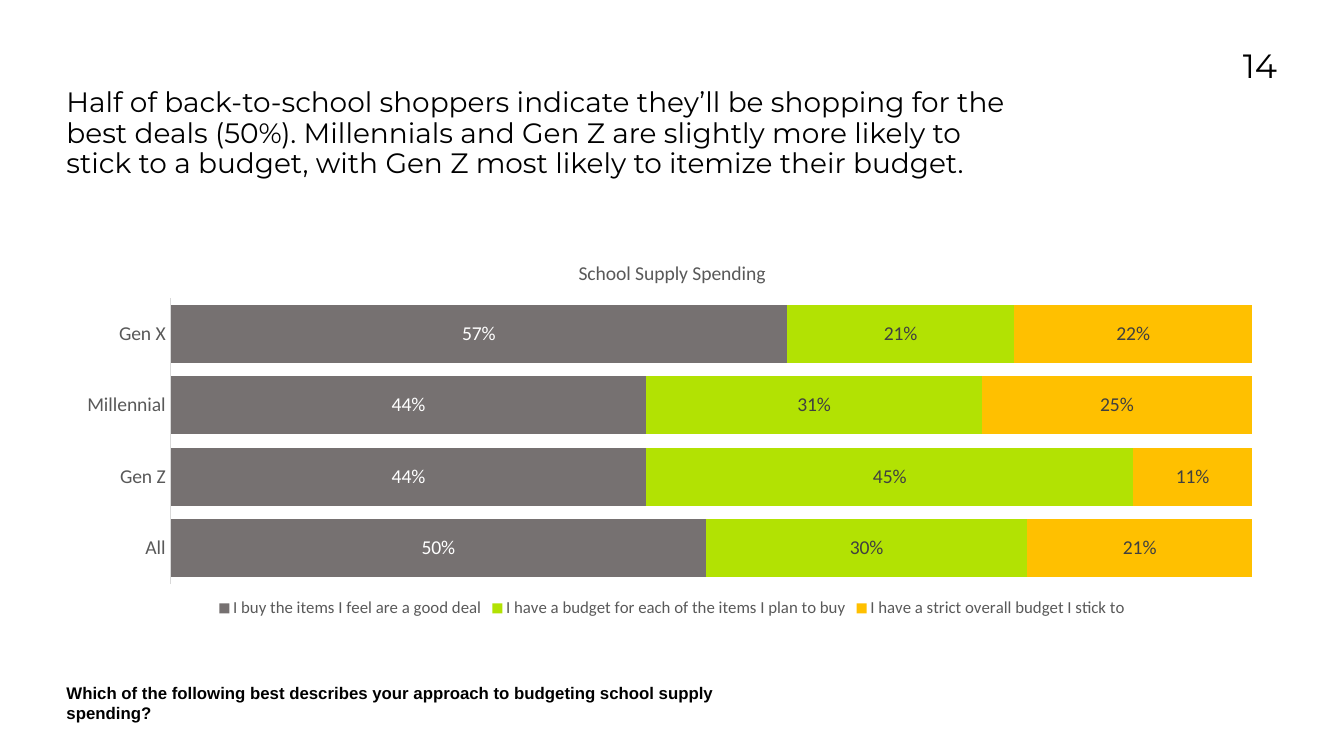
from pptx import Presentation
from pptx.chart.data import CategoryChartData
from pptx.dml.color import RGBColor as RGB
from pptx.enum.chart import XL_CHART_TYPE as CT, XL_LABEL_POSITION as LP
from pptx.enum.chart import XL_LEGEND_POSITION as LG, XL_TICK_LABEL_POSITION as TL, XL_TICK_MARK as TM
from pptx.enum.text import PP_ALIGN as AL
from pptx.oxml import parse_xml
from pptx.oxml.ns import nsdecls
from pptx.util import Cm, Pt

HEADLINE = ("Half of back-to-school shoppers indicate they’ll be shopping for the best deals (50%). "
            "Millennials and Gen Z are slightly more likely to stick to a budget, "
            "with Gen Z most likely to itemize their budget.")
QUESTION = "Which of the following best describes your approach to budgeting school supply spending?"
PAGE = "14"
CHART_TITLE = "School Supply Spending"
GROUPS = ["All", "Gen Z", "Millennial", "Gen X"]
ANSWERS = [
    ("I buy the items I feel are a good deal", (0.5, 0.44, 0.44, 0.57), "deal", "on_dark"),
    ("I have a budget for each of the items I plan to buy", (0.3, 0.45, 0.31, 0.21), "itemized", "on_light"),
    ("I have a strict overall budget I stick to", (0.21, 0.11, 0.25, 0.22), "strict", "on_light"),
]
PLOT = {"x": 0.086, "y": 0.138, "w": 0.893, "h": 0.761}


class Theme:
    """Colours, fonts and type sizes of the slide."""
    colors = {"text": "000000", "muted": "595959", "axis": "D9D9D9", "deal": "767171",
              "itemized": "B2E203", "strict": "FFC000", "on_dark": "FFFFFF", "on_light": "404040"}
    head, body, chart = "Montserrat", "Arial", "Calibri"
    page, title, label, note = 48, 40, 28, 24


def color(name):
    """Return a theme colour."""
    return RGB.from_string(Theme.colors[name])


def style(font, name, size, tint="text", bold=False):
    """Set face, size, colour and weight of a font."""
    font.name, font.size, font.bold = name, Pt(size), bold
    font.color.rgb = color(tint)


def add_text(s, text, box, name, size, bold=False, align=AL.LEFT, spacing=None):
    """Add a wrapped text box without insets."""
    tf = s.shapes.add_textbox(*map(Cm, box)).text_frame
    tf.word_wrap = True
    tf.margin_left = tf.margin_right = tf.margin_top = tf.margin_bottom = 0
    p = tf.paragraphs[0]
    p.alignment, p.line_spacing = align, spacing
    r = p.add_run()
    r.text = text
    style(r.font, name, size, bold=bold)


def place_plot(chart):
    """Fix the inner plot area inside the chart frame."""
    area = chart._chartSpace.chart.plotArea
    for old in area.findall("{*}layout"):
        area.remove(old)
    parts = '<c:layoutTarget val="inner"/><c:xMode val="edge"/><c:yMode val="edge"/>'
    parts += "".join(f'<c:{k} val="{v}"/>' for k, v in PLOT.items())
    area.insert(0, parse_xml(f'<c:layout {nsdecls("c")}><c:manualLayout>{parts}</c:manualLayout></c:layout>'))


def add_spending_chart(s, box):
    """Add the stacked bars of answers by generation."""
    data = CategoryChartData(number_format="0%")
    data.categories = GROUPS
    for name, values, *_ in ANSWERS:
        data.add_series(name, values)
    chart = s.shapes.add_chart(CT.BAR_STACKED_100, *map(Cm, box), data).chart
    style(chart.font, Theme.chart, Theme.label, "muted")
    chart.has_title = True
    r = chart.chart_title.text_frame.paragraphs[0].add_run()
    r.text = CHART_TITLE
    style(r.font, Theme.chart, Theme.label, "muted")
    chart.has_legend = True
    chart.legend.position, chart.legend.include_in_layout = LG.BOTTOM, False
    style(chart.legend.font, Theme.chart, Theme.note, "muted")

    cat, val = chart.category_axis, chart.value_axis
    cat.major_tick_mark, cat.tick_label_position = TM.NONE, TL.LOW
    style(cat.tick_labels.font, Theme.chart, Theme.label, "muted")
    cat.format.line.color.rgb, cat.format.line.width = color("axis"), Pt(0.75)
    val.visible = val.has_major_gridlines = False
    val.minimum_scale, val.maximum_scale = 0, 1

    plot = chart.plots[0]
    plot.gap_width, plot.overlap, plot.vary_by_categories = 23, 100, False
    for series, (_, _, fill, tint) in zip(plot.series, ANSWERS):
        series.format.fill.solid()
        series.format.fill.fore_color.rgb = color(fill)
        labels = series.data_labels
        labels.show_value, labels.position = True, LP.CENTER
        labels.number_format, labels.number_format_is_linked = "0%", False
        style(labels.font, Theme.chart, Theme.label, tint)
    place_plot(chart)


def main():
    """Build the slide and save it."""
    prs = Presentation()
    prs.slide_width, prs.slide_height = Cm(67.74), Cm(38.1)
    s = prs.slides.add_slide(prs.slide_layouts[6])
    left = 3.35
    add_text(s, HEADLINE, (left, 4.47, 48.59, 5.28), Theme.head, Theme.title, spacing=0.9)
    add_text(s, QUESTION, (left, 34.42, 33.71, 1.65), Theme.body, Theme.note, bold=True)
    add_text(s, PAGE, (58.65, 2.24, 5.72, 4.17), Theme.head, Theme.page, align=AL.RIGHT)
    add_spending_chart(s, (left, 12.4, 61.04, 18.95))
    prs.save("out.pptx")


if __name__ == "__main__":
    main()
